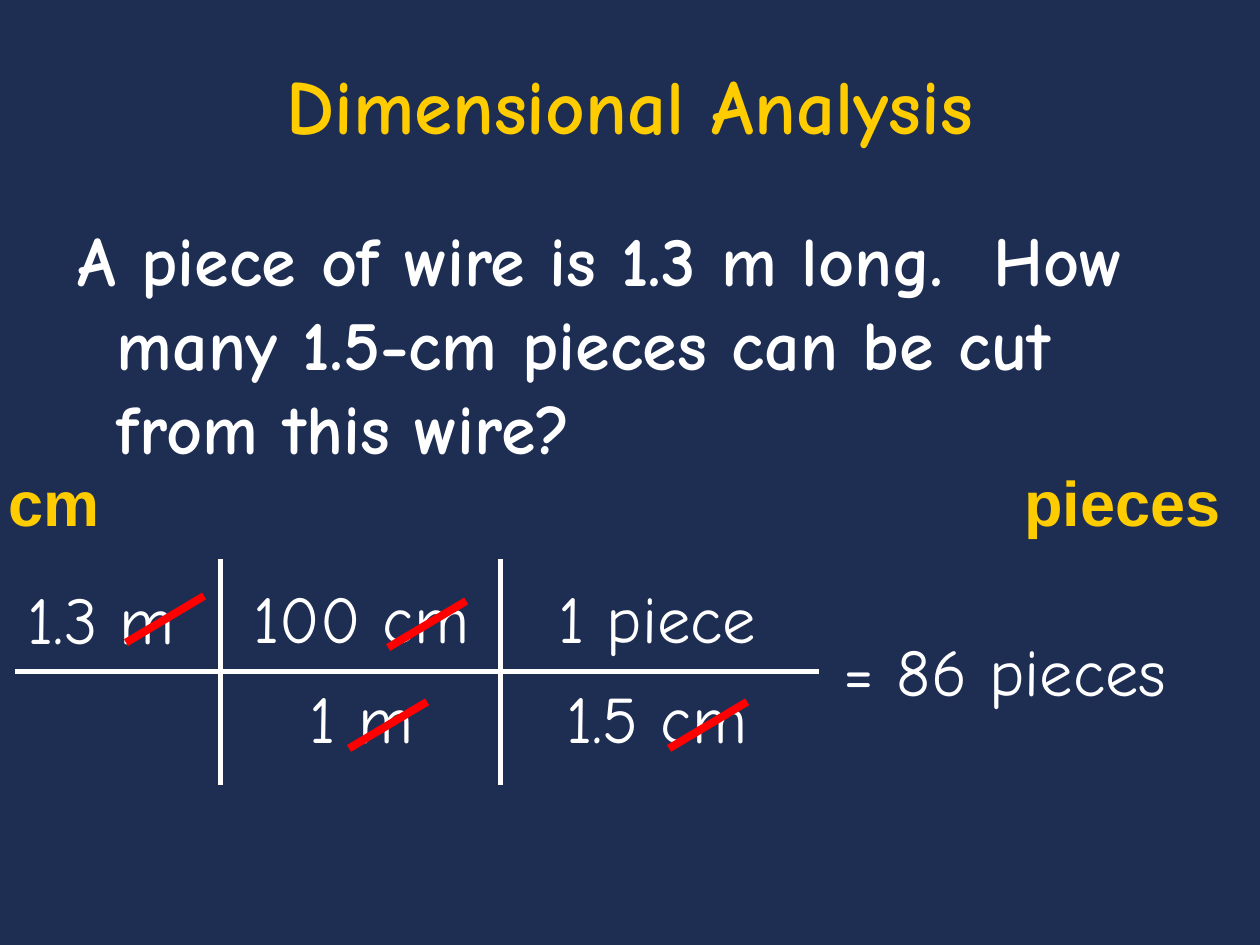
from dataclasses import dataclass
from lxml import etree
from pptx import Presentation
from pptx.dml.color import RGBColor
from pptx.enum.shapes import MSO_CONNECTOR
from pptx.enum.text import MSO_ANCHOR, MSO_AUTO_SIZE, PP_ALIGN
from pptx.oxml.ns import qn
from pptx.util import Inches, Pt


@dataclass(frozen=True)
class Theme:
    navy: RGBColor = RGBColor(0x1E, 0x2E, 0x53)
    gold: RGBColor = RGBColor(0xFF, 0xCC, 0x00)
    white: RGBColor = RGBColor(0xFF, 0xFF, 0xFF)
    red: RGBColor = RGBColor(0xFF, 0x00, 0x00)
    hand: str = "Comic Neue"
    sans: str = "Arial"
    title: int = 44
    question: int = 40
    factor: int = 38
    unit: int = 36
    rule: float = 3
    strike: float = 4.5


T = Theme()
LEFT, CENTER = PP_ALIGN.LEFT, PP_ALIGN.CENTER

TITLE = "Dimensional Analysis"
QUESTION = "A piece of wire is 1.3 m long.  How many 1.5-cm pieces can be cut from this wire?"
FACTORS = [
    (["1.3 m"], (0.12, 4.54, 2.11, 0.86), LEFT),
    (["100 cm", "1 m"], (1.82, 4.53, 2.1, 1.77), CENTER),
    (["1 piece", "1.5 cm"], (3.96, 4.53, 2.51, 1.77), CENTER),
    (["= 86 pieces"], (6.6, 4.95, 3.4, 0.79), LEFT),
]
UNITS = [("cm", (-0.03, 3.63, 0.92, 0.7)), ("pieces", (8.03, 3.63, 1.76, 0.7))]

BAR = (0.12, 5.33, 6.5, 5.33)
DIVIDERS_X = [1.75, 3.97]
DIVIDER_Y = (4.44, 6.23)
STRIKES = [(1, 4.73), (2.77, 5.57), (3.08, 4.77), (5.31, 5.57)]
STRIKE_W, STRIKE_H = 0.62, 0.37


def fill_text(sp, lines, size, color, font, bold=False, align=LEFT,
              hang=0, margin=0, before=(0, 0)):
    tf = sp.text_frame
    tf.text = "\n".join(lines)
    tf.auto_size = MSO_AUTO_SIZE.NONE
    for i, p in enumerate(tf.paragraphs):
        p.alignment = align
        p.space_before = Pt(before[min(i, 1)])
        p.font.size, p.font.name, p.font.bold = Pt(size), font, bold
        p.font.color.rgb = color
        pPr = p._p.get_or_add_pPr()
        pPr.set("marL", str(Inches(margin)))
        pPr.set("indent", str(Inches(-hang)))
    return tf


def add_text(s, box, lines, *style, wrap=True, **options):
    sp = s.shapes.add_textbox(*map(Inches, box))
    fill_text(sp, lines, *style, **options).word_wrap = wrap


def add_line(s, ends, color, width):
    line = s.shapes.add_connector(MSO_CONNECTOR.STRAIGHT, *map(Inches, ends))
    line.line.color.rgb = color
    line.line.width = Pt(width)
    etree.SubElement(line._element.spPr, qn("a:effectLst"))


def main():
    prs = Presentation()
    prs.slide_width, prs.slide_height = Inches(10), Inches(7.5)
    s = prs.slides.add_slide(prs.slide_layouts[5])
    s.background.fill.solid()
    s.background.fill.fore_color.rgb = T.navy

    title = s.shapes.title
    title.left, title.top, title.width, title.height = map(Inches, (0.75, 0.32, 8.5, 0.92))
    tf = fill_text(title, [TITLE], T.title, T.gold, T.hand, bold=True, align=CENTER)
    tf.vertical_anchor = MSO_ANCHOR.BOTTOM

    add_text(s, (0.33, 1.67, 9.33, 2.15), [QUESTION], T.question, T.white, T.hand,
             bold=True, margin=0.5, hang=0.31, before=(8, 8))
    for lines, box, align in FACTORS:
        add_text(s, box, lines, T.factor, T.white, T.hand,
                 align=align, margin=0.5, hang=0.5, before=(0, 11.5))
    for unit, box in UNITS:
        add_text(s, box, [unit], T.unit, T.gold, T.sans,
                 bold=True, align=CENTER, wrap=False)

    top, bottom = DIVIDER_Y
    for ends in [BAR] + [(x, top, x, bottom) for x in DIVIDERS_X]:
        add_line(s, ends, T.white, T.rule)
    for x, y in STRIKES:
        add_line(s, (x + STRIKE_W, y, x, y + STRIKE_H), T.red, T.strike)

    prs.save("out.pptx")


if __name__ == "__main__":
    main()
